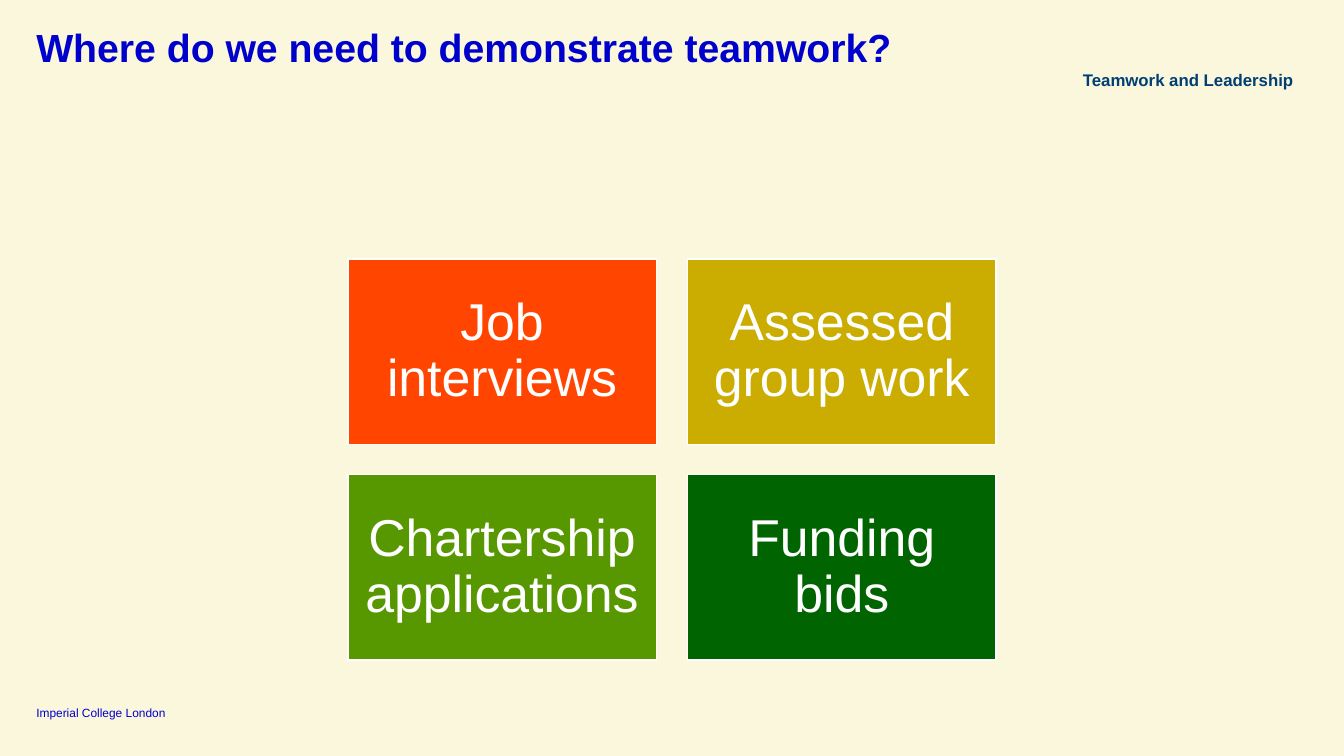
"""Build the slide on where teamwork needs to be demonstrated."""
from dataclasses import dataclass

from pptx import Presentation
from pptx.dml.color import RGBColor
from pptx.enum.shapes import MSO_SHAPE
from pptx.enum.text import MSO_ANCHOR, MSO_AUTO_SIZE, PP_ALIGN
from pptx.util import Inches, Pt


@dataclass(frozen=True)
class Theme:
    font: str = "Arial"
    background: str = "FBF7DC"
    heading: str = "0000CD"
    course: str = "003E74"
    white: str = "FFFFFF"
    orange: str = "FF4500"
    gold: str = "CBAC00"
    light_green: str = "579800"
    dark_green: str = "006400"
    title_size: float = 28
    tile_size: float = 37
    course_size: float = 12
    footer_size: float = 8.5


theme = Theme()


def place(shape, left, top, width, height):
    shape.left, shape.top = Inches(left), Inches(top)
    shape.width, shape.height = Inches(width), Inches(height)


def write(shape, text, size, color, bold=False, align=PP_ALIGN.LEFT,
          anchor=MSO_ANCHOR.TOP, spacing=1.0, inset=0):
    frame = shape.text_frame
    frame.word_wrap = True
    frame.auto_size = MSO_AUTO_SIZE.NONE
    frame.vertical_anchor = anchor
    frame.margin_left = frame.margin_right = Inches(inset)
    frame.margin_top = frame.margin_bottom = Inches(inset)
    paragraph = frame.paragraphs[0]
    paragraph.alignment = align
    paragraph.line_spacing = spacing
    run = paragraph.add_run()
    run.text = text
    run.font.name = theme.font
    run.font.size = Pt(size)
    run.font.bold = bold
    run.font.color.rgb = RGBColor.from_string(color)


presentation = Presentation()
presentation.slide_width = Inches(13.33)
presentation.slide_height = Inches(7.5)
slide = presentation.slides.add_slide(presentation.slide_layouts[5])
slide.background.fill.solid()
slide.background.fill.fore_color.rgb = RGBColor.from_string(theme.background)

margin = 0.36
title = slide.shapes.title
place(title, margin, 0.28, 12.62, 0.41)
write(title, "Where do we need to demonstrate teamwork?", theme.title_size,
      theme.heading, bold=True, spacing=0.9)

footer = slide.shapes.add_textbox(0, 0, 0, 0)
place(footer, margin, 6.99, 1.55, 0.15)
write(footer, "Imperial College London", theme.footer_size, theme.heading,
      anchor=MSO_ANCHOR.BOTTOM)

tiles = [
    ("Job interviews", theme.orange),
    ("Assessed group work", theme.gold),
    ("Chartership applications", theme.light_green),
    ("Funding bids", theme.dark_green),
]
columns = 2
grid_left, grid_top = 3.45, 2.57
tile_width, tile_height = 3.06, 1.84
column_gap, row_gap = 0.31, 0.3
for index, (label, color) in enumerate(tiles):
    row, column = divmod(index, columns)
    tile = slide.shapes.add_shape(MSO_SHAPE.RECTANGLE, 0, 0, 0, 0)
    place(tile, grid_left + column * (tile_width + column_gap),
          grid_top + row * (tile_height + row_gap), tile_width, tile_height)
    tile.shadow.inherit = False
    tile.fill.solid()
    tile.fill.fore_color.rgb = RGBColor.from_string(color)
    tile.line.color.rgb = RGBColor.from_string(theme.white)
    tile.line.width = Pt(1)
    write(tile, label, theme.tile_size, theme.white, align=PP_ALIGN.CENTER,
          anchor=MSO_ANCHOR.MIDDLE, spacing=0.9, inset=0.15)

course = slide.shapes.add_textbox(0, 0, 0, 0)
place(course, 9.41, 0.68, 3.42, 0.34)
write(course, "Teamwork and Leadership", theme.course_size, theme.course,
      bold=True, align=PP_ALIGN.RIGHT, spacing=1.05)

presentation.save("out.pptx")
